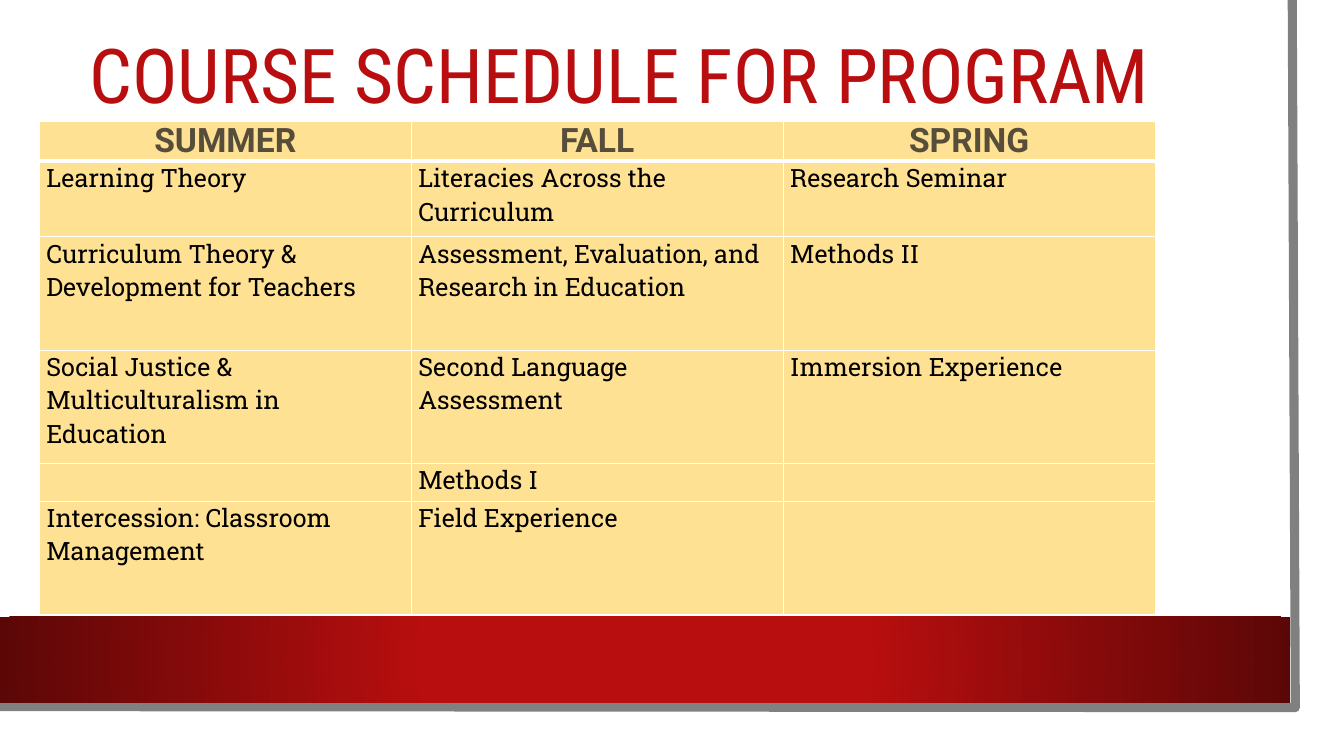
from lxml import etree
from pptx import Presentation
from pptx import util as u
from pptx.dml.color import RGBColor
from pptx.enum import shapes, text
from pptx.oxml import ns

COLORS = {"paper": "FFFFFF", "red": "B80E0F", "dark": "5C0707", "edge": "808080",
          "cell": "FFE193", "head": "564D3B", "body": "000000"}
FONTS = {"title": "Roboto Condensed", "head": "Roboto", "body": "Roboto Slab"}

COURSES = [
    ["SUMMER", "FALL", "SPRING"],
    ["Learning Theory", "Literacies Across the Curriculum", "Research Seminar"],
    ["Curriculum Theory & Development for Teachers",
     "Assessment, Evaluation, and Research in Education", "Methods II"],
    ["Social Justice & Multiculturalism in Education",
     "Second Language Assessment", "Immersion Experience"],
    ["", "Methods I", ""],
    ["Intercession: Classroom Management", "Field Experience", ""],
]
ROW_LINES = [1, 2, 3, 3, 1, 3]


class Deck:
    """Style and current slide; lengths are grid units of a tenth of an inch."""

    def __init__(self):
        self.prs = Presentation()
        self.prs.slide_width, self.prs.slide_height = self.grid(133.33, 75)
        self.s = self.prs.slides.add_slide(self.prs.slide_layouts[6])

    def grid(self, *units):
        return [u.Inches(n / 10) for n in units]

    def color(self, name):
        return RGBColor.from_string(COLORS[name])

    def font(self, p, role, size, color, bold=False):
        p.font.name, p.font.size, p.font.bold = FONTS[role], u.Pt(size), bold
        p.font.color.rgb = self.color(color)

    def rect(self, box, color):
        sp = self.s.shapes.add_shape(shapes.MSO_SHAPE.RECTANGLE, *self.grid(*box))
        sp.shadow.inherit = False
        sp.fill.solid()
        sp.fill.fore_color.rgb = self.color(color)
        sp.line.fill.background()
        return sp

    def radial_band(self, box, inner, outer, start):
        sp = self.rect(box, inner)
        sp.fill.gradient()
        stops = zip(sp.fill.gradient_stops, (inner, outer), (start, 1))
        for stop, name, position in stops:
            stop.color.rgb, stop.position = self.color(name), position
        grad = sp._element.spPr.find(ns.qn("a:gradFill"))
        grad.remove(grad.find(ns.qn("a:lin")))
        circle = etree.SubElement(grad, ns.qn("a:path"), path="circle")
        etree.SubElement(circle, ns.qn("a:fillToRect"),
                         {side: "50000" for side in "ltrb"})

    def outline(self, points, color, width):
        start, *rest = [self.grid(*point) for point in points]
        builder = self.s.shapes.build_freeform(*start)
        builder.add_line_segments(rest, close=False)
        sp = builder.convert_to_shape()
        sp.shadow.inherit = False
        sp.fill.background()
        sp.line.color.rgb, sp.line.width = self.color(color), u.Pt(width)

    def title(self, box, words):
        tf = self.s.shapes.add_textbox(*self.grid(*box)).text_frame
        tf.word_wrap = True
        tf.vertical_anchor = text.MSO_ANCHOR.MIDDLE
        p = tf.paragraphs[0]
        p.text, p.line_spacing = words, 0.9
        self.font(p, "title", 54, "red")

    def borders(self, cell, widths):
        props = cell._tc.get_or_add_tcPr()
        for i, (side, width) in enumerate(zip("LRTB", widths)):
            ln = etree.Element(ns.qn(f"a:ln{side}"), w=str(u.Pt(width)))
            fill = etree.SubElement(ln, ns.qn("a:solidFill"))
            etree.SubElement(fill, ns.qn("a:srgbClr"), val=COLORS["paper"])
            props.insert(i, ln)

    def table(self, box, rows, lines):
        left, top, width, height = self.grid(*box)
        table = self.s.shapes.add_table(len(rows), len(rows[0]),
                                        left, top, width, height).table
        for column in table.columns:
            column.width = width // len(rows[0])
        for row, count in zip(table.rows, lines):
            row.height = height * count // sum(lines)
        for r, row in enumerate(rows):
            for c, words in enumerate(row):
                self.cell(table.cell(r, c), words, r, c)

    def cell(self, cell, words, r, c):
        cell.fill.solid()
        cell.fill.fore_color.rgb = self.color("cell")
        cell.margin_left = cell.margin_right = u.Inches(0.07)
        cell.margin_top = cell.margin_bottom = 0
        self.borders(cell, (1, 1, 3 if r == 1 else 1, 3 if r == 0 else 1))
        p = cell.text_frame.paragraphs[0]
        p.text = words
        if r == 0:
            p.alignment = text.PP_ALIGN.CENTER
            self.font(p, "head", 24, "head", bold=True)
        else:
            if c == 0 and words:
                p.space_after = u.Pt(3)
            self.font(p, "body", 18, "body")


def main():
    deck = Deck()
    # Paper sheet with its grey edge and red band
    deck.rect((0, 0, 131, 72.7), "paper")
    deck.outline([(128.2, 0), (128.5, 70.2), (-0.3, 70.1)], "edge", 6.5)
    deck.radial_band((0, 61.2, 128, 8.5), "red", "dark", 0.34)
    # Title and course table
    deck.title((7.9, 1.5, 113.7, 12.6), "COURSE SCHEDULE FOR PROGRAM")
    deck.table((3.9, 12, 110.7, 48.7), COURSES, ROW_LINES)
    deck.prs.save("out.pptx")


if __name__ == "__main__":
    main()
